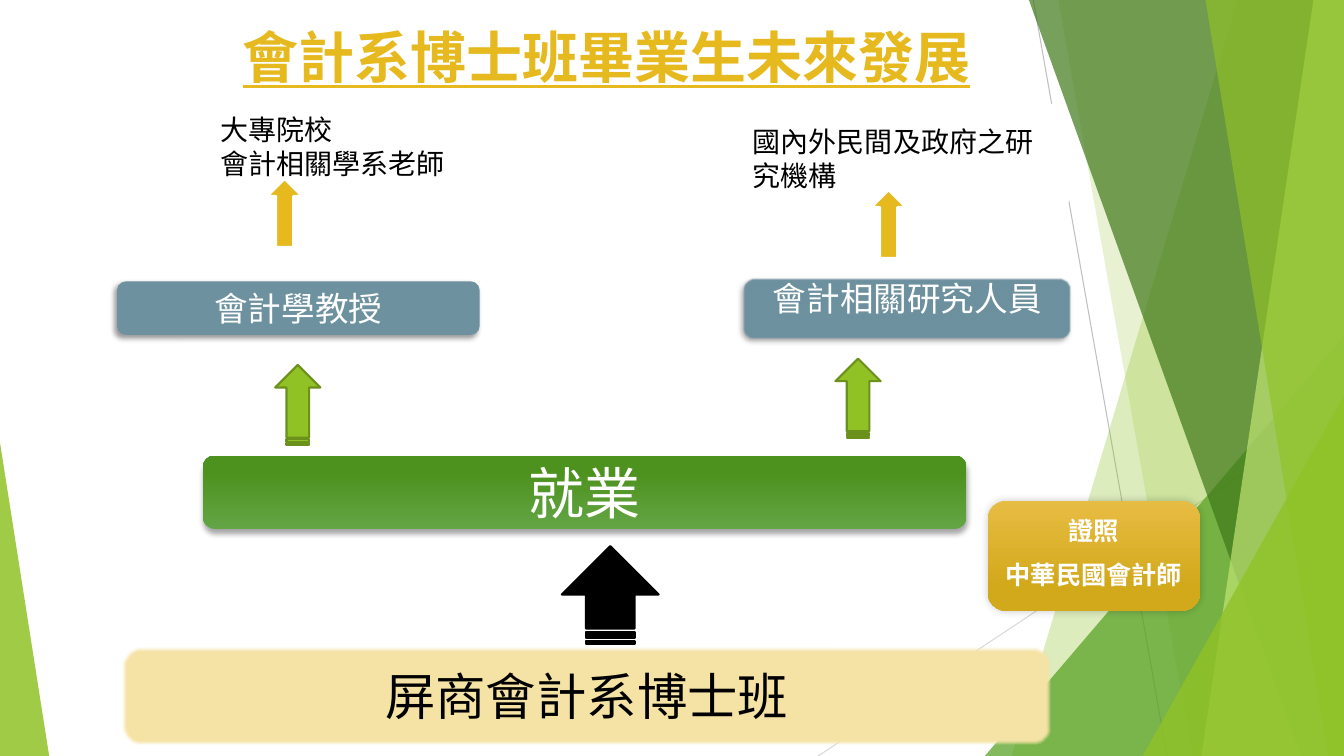
from pptx import Presentation
from pptx.dml.color import RGBColor
from pptx.enum.shapes import MSO_CONNECTOR, MSO_SHAPE as SHAPE
from pptx.enum.text import MSO_ANCHOR, PP_ALIGN
from pptx.oxml.ns import qn
from pptx.util import Cm, Pt
from lxml.etree import SubElement

WHITE, BLACK = RGBColor(255, 255, 255), RGBColor(0, 0, 0)
GOLD = RGBColor(0xE6, 0xB9, 0x1E)
CREAM = RGBColor(0xF5, 0xE3, 0xA5)
SLATE = RGBColor(0x6E, 0x91, 0xA0)
LIME, LIME_DARK = RGBColor(0x90, 0xC2, 0x26), RGBColor(0x6B, 0x90, 0x1C)
LIME_PALE = RGBColor(0xC0, 0xE4, 0x74)
GREEN, FOREST = RGBColor(0x54, 0xA0, 0x21), RGBColor(0x3F, 0x78, 0x19)
CAREER_GRADIENT = (RGBColor(0x63, 0xA5, 0x45), RGBColor(0x4D, 0x92, 0x1E), 90)
LICENCE_GRADIENT = (RGBColor(0xE7, 0xBC, 0x43), RGBColor(0xD2, 0xA9, 0x1B), 270)
GREY, PALE_GREY = RGBColor(0xBF, 0xBF, 0xBF), RGBColor(0xD9, 0xD9, 0xD9)
LATIN, CJK = "Times New Roman", "Noto Sans CJK TC"
WIDTH, HEIGHT = 33.87, 19.05

# Content; all lengths in cm
TITLE = "會計系博士班畢業生未來發展"
RAYS = [  # start, end, colour
    ((26.04, 0), (29.41, HEIGHT), GREY),
    ((WIDTH, 10.24), (20.62, HEIGHT), PALE_GREY),
]
FACETS = [  # left edge from top (x, y) to bottom x, side it fills to, colour, opacity %
    (31.19, 0, 25.5, WIDTH, LIME, 30),
    (26.67, 0, 30.05, WIDTH, LIME, 20),
    (WIDTH, 8.46, 24.82, WIDTH, GREEN, 72),
    (25.93, 0, 32.79, WIDTH, FOREST, 70),
    (33.1, 0, 30.28, WIDTH, LIME_PALE, 70),
    (30.38, 0, 33.48, WIDTH, LIME, 65),
    (WIDTH, 9.98, 28.8, WIDTH, LIME, 80),
    (0, 11.15, 1.24, 0, LIME, 85),
]
SLATE_SHADOW = (40, 4, 3, 135)  # opacity %, blur pt, distance pt, angle
BOXES = [  # text lines, place, fill, shadow, soft edge pt, text format
    (["屏商會計系博士班"], (3.1, 16.31, 23.37, 2.44), CREAM, None, 2,
     dict(size=36, color=BLACK)),
    (["就業"], (5.11, 11.48, 19.25, 1.85), CAREER_GRADIENT, (35, 4, 3, 90), 0,
     dict(size=40)),
    (["會計學教授"], (2.95, 7.09, 9.14, 1.35), SLATE, SLATE_SHADOW, 0,
     dict(size=24)),
    (["會計相關研究人員"], (18.75, 7.01, 8.23, 1.52), SLATE, SLATE_SHADOW, 1,
     dict(size=24, bottom=0.5)),
    (["國內外民間及政府之研究機構"], (18.59, 2.62, 8.38, 2.74), WHITE, None, 0,
     dict(size=20, color=BLACK, align=PP_ALIGN.LEFT, leading=24.3)),
    (["大專院校", "會計相關學系老師"], (5.21, 2.62, 7.75, 2.13), WHITE, None, 0,
     dict(size=20, color=BLACK, align=PP_ALIGN.LEFT, leading=24.3)),
    (["證照", "中華民國會計師"], (24.89, 12.62, 5.36, 2.77), LICENCE_GRADIENT,
     (20, 6, 0, 225), 0, dict(size=18, bold=True, bottom=0.5, leading=31.4)),
]
UP, STRIPED = SHAPE.UP_ARROW, SHAPE.STRIPED_RIGHT_ARROW
ARROWS = [  # kind, place, rotation, fill, line, line width pt
    (UP, (6.73, 4.5, 0.89, 1.73), 0, GOLD, WHITE, 2),
    (STRIPED, (14.15, 13.77, 2.46, 2.44), 270, BLACK, BLACK, 1.5),
    (STRIPED, (6.5, 9.63, 2.01, 1.14), 270, LIME, LIME_DARK, 1.5),
    (STRIPED, (20.62, 9.47, 2.01, 1.14), 270, LIME, LIME_DARK, 1.5),
    (UP, (21.95, 4.78, 0.89, 1.73), 0, GOLD, WHITE, 2),
]


def write(shape, lines, size, color=WHITE, bold=False, underline=False, font=LATIN,
          align=PP_ALIGN.CENTER, leading=None, bottom=0, wrap=True):
    frame = shape.text_frame
    frame.word_wrap = wrap
    frame.vertical_anchor = MSO_ANCHOR.MIDDLE
    frame.margin_left = frame.margin_right = Cm(0.25)
    frame.margin_top, frame.margin_bottom = 0, Cm(bottom)
    for i, line in enumerate(lines):
        para = frame.paragraphs[0] if i == 0 else frame.add_paragraph()
        para.alignment = align
        if leading:
            para.line_spacing = Pt(leading)
        run = para.add_run()
        run.text = line
        run.font.name, run.font.size = font, Pt(size)
        run.font.bold, run.font.underline = bold, underline
        run.font.color.rgb = color
        latin = run.font._element.find(qn("a:latin"))
        east_asian = latin.makeelement(qn("a:ea"), {"typeface": CJK})
        latin.addnext(east_asian)


def paint(shape, fill):
    shape.shadow.inherit = False
    if isinstance(fill, RGBColor):
        shape.fill.solid()
        shape.fill.fore_color.rgb = fill
        return
    start, end, angle = fill
    shape.fill.gradient()
    shape.fill.gradient_angle = angle
    for stop, color, position in zip(shape.fill.gradient_stops, (start, end), (0, 0.78)):
        stop.color.rgb, stop.position = color, position


def set_alpha(color_element, percent):
    SubElement(color_element, qn("a:alpha"), val=str(percent * 1000))


def add_effects(shape, shadow, soft_edge):
    effects = shape._element.spPr.find(qn("a:effectLst"))
    if shadow:
        opacity, blur, distance, angle = shadow
        outer = SubElement(effects, qn("a:outerShdw"), blurRad=str(Pt(blur)),
                           dist=str(Pt(distance)), dir=str(angle * 60000), rotWithShape="0")
        set_alpha(SubElement(outer, qn("a:srgbClr"), val=str(BLACK)), opacity)
    if soft_edge:
        SubElement(effects, qn("a:softEdge"), rad=str(Pt(soft_edge)))


deck = Presentation()
deck.slide_width, deck.slide_height = Cm(WIDTH), Cm(HEIGHT)
slide = deck.slides.add_slide(deck.slide_layouts[5])
shapes = slide.shapes

# Background rays and facets
for start, end, color in RAYS:
    ray = shapes.add_connector(MSO_CONNECTOR.STRAIGHT, *map(Cm, start + end))
    ray.line.color.rgb, ray.line.width = color, Pt(0.75)
    SubElement(ray._element.spPr, qn("a:effectLst"))

for top_x, top_y, bottom_x, side, color, opacity in FACETS:
    corners = [(side, top_y), (side, HEIGHT), (bottom_x, HEIGHT)]
    if top_x == side:
        corners = corners[1:]
    outline = shapes.build_freeform(Cm(top_x), Cm(top_y))
    outline.add_line_segments([(Cm(x), Cm(y)) for x, y in corners], close=True)
    facet = outline.convert_to_shape()
    paint(facet, color)
    facet.line.fill.background()
    set_alpha(facet.fill._xPr.find(qn("a:solidFill"))[0], opacity)

# Career boxes
for lines, place, fill, shadow, soft_edge, text_format in BOXES:
    box = shapes.add_shape(SHAPE.ROUNDED_RECTANGLE, *map(Cm, place))
    paint(box, fill)
    box.line.fill.background()
    add_effects(box, shadow, soft_edge)
    write(box, lines, **text_format)

# Title
title = shapes.title
title.left, title.top, title.width, title.height = map(Cm, (5.87, 0.43, 19.02, 1.96))
write(title, [TITLE], size=40, color=GOLD, bold=True, underline=True, font=CJK,
      align=PP_ALIGN.LEFT, wrap=False)

# Arrows
for kind, place, rotation, fill, line, line_width in ARROWS:
    arrow = shapes.add_shape(kind, *map(Cm, place))
    arrow.rotation = rotation
    paint(arrow, fill)
    arrow.line.color.rgb, arrow.line.width = line, Pt(line_width)

deck.save("out.pptx")
